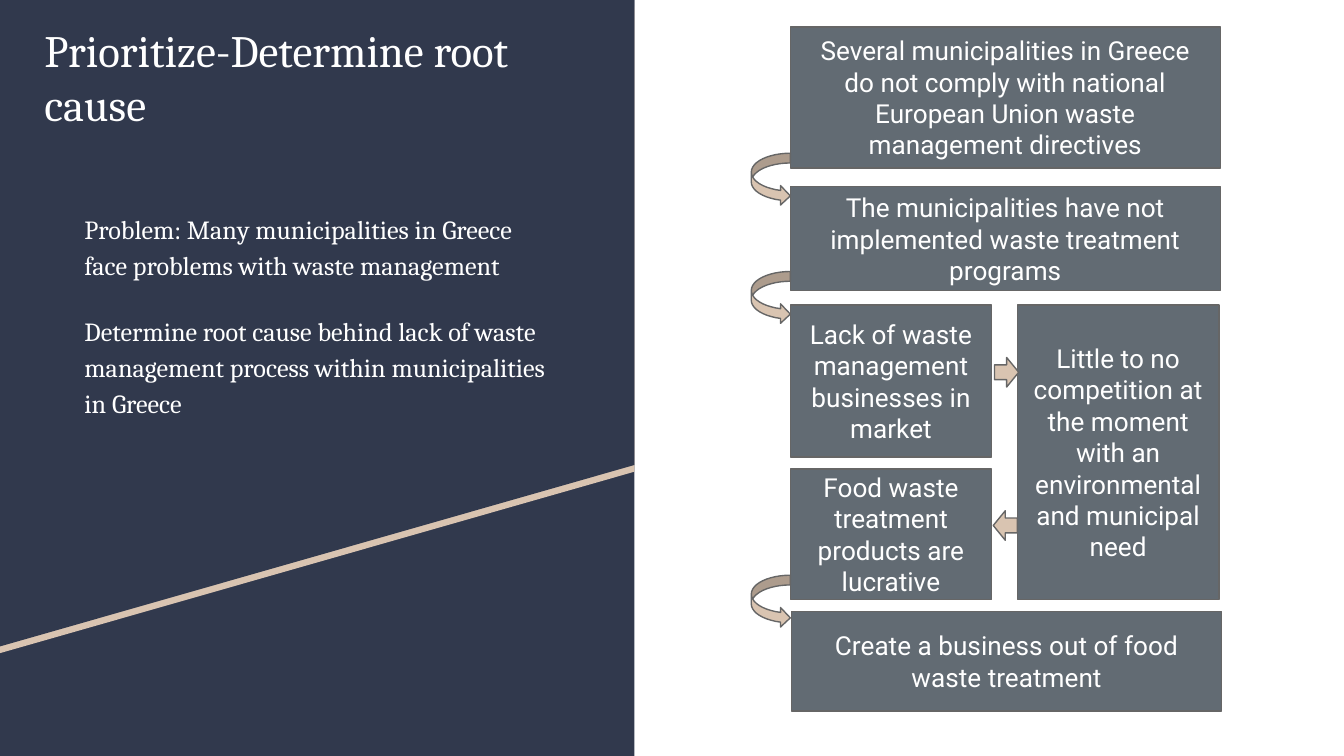
from pptx import Presentation
from pptx.dml.color import RGBColor
from pptx.enum import shapes as kinds, text as txt
from pptx.util import Inches, Pt

SLIDE_WIDTH = 10
SLIDE_HEIGHT = SLIDE_WIDTH * 9 / 16
COLORS = {
    "navy": "31394D",
    "sand": "D9C4B1",
    "slate": "626B73",
    "outline": "666666",
    "white": "FFFFFF",
}
SHAPE = kinds.MSO_SHAPE


def rgb(name):
    return RGBColor.from_string(COLORS[name])


def paint(shape, fill, line=None):
    shape.shadow.inherit = False
    shape.fill.solid()
    shape.fill.fore_color.rgb = rgb(fill)
    if line:
        shape.line.color.rgb = rgb(line)
        shape.line.width = Pt(0.75)
    else:
        shape.line.fill.background()


def add_shape(slide, preset, left, top, width, height, fill, line=None):
    shape = slide.shapes.add_shape(
        preset, Inches(left), Inches(top), Inches(width), Inches(height))
    paint(shape, fill, line)
    return shape


def write(frame, *paragraphs, font="Cambria", size=14, color="white",
          align=txt.PP_ALIGN.LEFT, anchor=txt.MSO_ANCHOR.TOP,
          spacing=1.0, gap=0):
    """Fill a text frame; gap is the space in points between paragraphs."""
    frame.word_wrap = True
    frame.auto_size = txt.MSO_AUTO_SIZE.NONE
    frame.vertical_anchor = anchor
    frame.margin_left = frame.margin_right = Inches(0.1)
    frame.margin_top = frame.margin_bottom = Inches(0.1)
    for i, words in enumerate(paragraphs):
        paragraph = frame.add_paragraph() if i else frame.paragraphs[0]
        paragraph.alignment = align
        paragraph.line_spacing = spacing
        paragraph.space_before = Pt(gap if i else 0)
        run = paragraph.add_run()
        run.text = words
        run.font.name = font
        run.font.size = Pt(size)
        run.font.color.rgb = rgb(color)


def add_polygon(slide, points, fill):
    start, *rest = [(Inches(x), Inches(y)) for x, y in points]
    builder = slide.shapes.build_freeform(*start)
    builder.add_line_segments(rest, close=True)
    paint(builder.convert_to_shape(), fill)


def problem_panel(slide, left, top, width, height):
    # Navy background with a slanted sand stripe
    add_shape(slide, SHAPE.RECTANGLE, left, top, width, height, "navy")
    right = left + width
    for offset, fill in ((0.05, "sand"), (0, "navy")):
        edge = top + offset
        add_polygon(slide, [(left, edge), (right, edge),
                            (right, edge + 3.46), (left, edge + 4.81)], fill)

    # Title, raised above the panel
    title = slide.shapes.title
    title.left, title.top = Inches(left + 0.23), Inches(top + 0.07)
    title.width, title.height = Inches(4.29), Inches(0.88)
    write(title.text_frame, "Prioritize-Determine root cause", size=24)
    title.element.getparent().append(title.element)

    # Problem statement
    statement = slide.shapes.add_textbox(
        Inches(left + 0.53), Inches(top + 1.45), Inches(3.71), Inches(2.11))
    write(statement.text_frame,
          "Problem: Many municipalities in Greece face problems with waste "
          "management",
          "Determine root cause behind lack of waste management process "
          "within municipalities in Greece",
          spacing=1.15, gap=16)


def cause_flow(slide, left, top, width):
    half = 1.5
    right_column = 1.69

    # Cause boxes: x, y, width, height, wording
    causes = [
        (0, 0, width, 1.05,
         "Several municipalities in Greece do not comply with national "
         "European Union waste management directives"),
        (0, 1.19, width, 0.77,
         "The municipalities have not implemented waste treatment programs"),
        (0, 2.07, half, 1.13,
         "Lack of waste management businesses in market"),
        (0, 3.29, half, 0.97,
         "Food waste treatment products are lucrative"),
        (right_column, 2.07, half, 2.19,
         "Little to no competition at the moment with an environmental and "
         "municipal need"),
        (0.01, 4.35, width, 0.74,
         "Create a business out of food waste treatment"),
    ]
    for x, y, box_width, box_height, words in causes:
        cause = add_shape(slide, SHAPE.RECTANGLE, left + x, top + y,
                          box_width, box_height, "slate", "outline")
        write(cause.text_frame, words, font="Roboto",
              align=txt.PP_ALIGN.CENTER, anchor=txt.MSO_ANCHOR.MIDDLE)

    # Curved arrows down the left edge
    for y in (0.94, 1.82, 4.08):
        add_shape(slide, SHAPE.CURVED_RIGHT_ARROW, left - 0.29, top + y,
                  0.29, 0.39, "sand", "outline")

    # Short arrows between the two columns
    for preset, x, y in ((SHAPE.RIGHT_ARROW, 1.52, 2.46),
                         (SHAPE.LEFT_ARROW, 1.51, 3.6)):
        add_shape(slide, preset, left + x, top + y, 0.18, 0.22,
                  "sand", "outline")


def main():
    deck = Presentation()
    deck.slide_width = Inches(SLIDE_WIDTH)
    deck.slide_height = Inches(SLIDE_HEIGHT)
    slide = deck.slides.add_slide(deck.slide_layouts.get_by_name("Title Only"))
    problem_panel(slide, 0, 0, 4.72, SLIDE_HEIGHT)
    cause_flow(slide, 5.88, 0.2, 3.2)
    deck.save("out.pptx")


if __name__ == "__main__":
    main()
